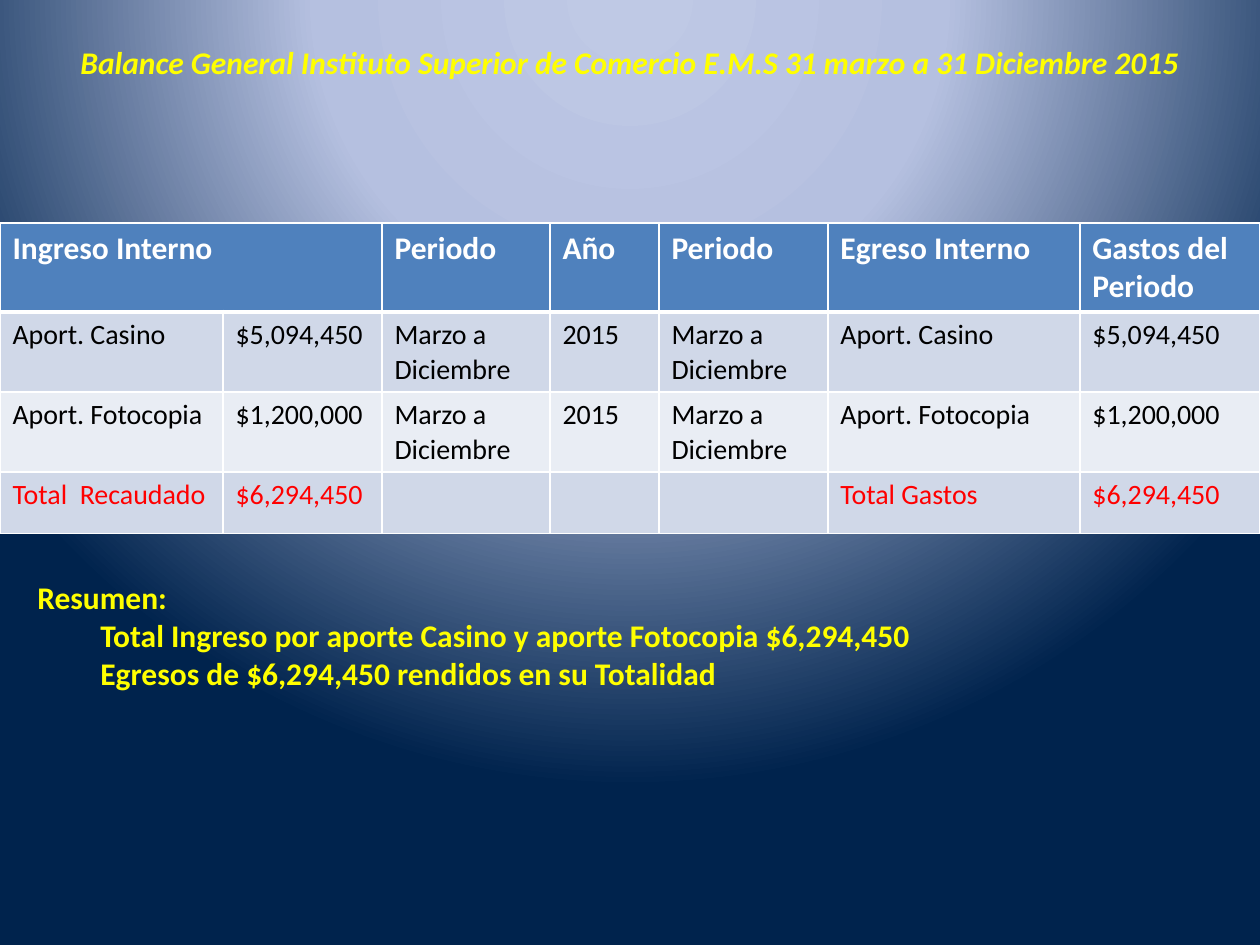
"""Build the 2015 balance slide: title, income and expense table, and summary."""
from lxml.etree import SubElement
from pptx import Presentation
from pptx.dml.color import RGBColor
from pptx.enum.text import MSO_AUTO_SIZE, PP_ALIGN
from pptx.oxml.ns import qn
from pptx.util import Pt

PX = 914400 // 126
COLORS = {
    "yellow": "FFFF00", "white": "FFFFFF", "black": "000000", "red": "FF0000",
    "header": "4F81BD", "band_dark": "D0D8E8", "band_light": "E9EDF4",
    "glow": "BFC9E5", "halo": "B5C0E0", "night": "00234D",
}


def add_run(paragraph, text, size, color, bold=False, italic=False):
    run = paragraph.add_run()
    run.text = text
    run.font.name = "Calibri"
    run.font.size = Pt(size)
    run.font.bold = bold
    run.font.italic = italic
    run.font.color.rgb = RGBColor.from_string(COLORS[color])


def add_text(slide, top, height, lines, align, italic=False):
    box = slide.shapes.add_textbox(25 * PX, top * PX, 1210 * PX, height * PX)
    frame = box.text_frame
    frame.word_wrap = True
    frame.auto_size = MSO_AUTO_SIZE.SHAPE_TO_FIT_TEXT
    for index, line in enumerate(lines):
        paragraph = frame.add_paragraph() if index else frame.paragraphs[0]
        paragraph.alignment = align
        add_run(paragraph, line, 18, "yellow", True, italic)


prs = Presentation()
prs.slide_width = 1260 * PX
prs.slide_height = 945 * PX
slide = prs.slides.add_slide(prs.slide_layouts[6])

slide.background.fill.gradient()
backdrop = slide.element.find(".//" + qn("a:gradFill"))
for child in list(backdrop):
    backdrop.remove(child)
stops = SubElement(backdrop, qn("a:gsLst"))
for percent, color in [(0, "glow"), (40, "halo"), (100, "night")]:
    stop = SubElement(stops, qn("a:gs"), pos=str(percent * 1000))
    SubElement(stop, qn("a:srgbClr"), val=COLORS[color])
circle = SubElement(backdrop, qn("a:path"), path="circle")
SubElement(circle, qn("a:fillToRect"), l="50000", t="-80000", r="50000", b="180000")

add_text(slide, 37, 50,
         ["Balance General Instituto Superior de Comercio E.M.S 31 marzo a 31 Diciembre 2015"],
         PP_ALIGN.CENTER, italic=True)

period = ["Marzo a Diciembre", "2015", "Marzo a Diciembre"]
casino = ["Aport. Casino", "$5,094,450"]
photocopy = ["Aport. Fotocopia", "$1,200,000"]
balance_rows = [
    ["Ingreso Interno", "", "Periodo", "Año", "Periodo", "Egreso Interno", "Gastos del Periodo"],
    casino + period + casino,
    photocopy + period + photocopy,
    ["Total  Recaudado", "$6,294,450", "", "", "", "Total Gastos", "$6,294,450"],
]
row_styles = [
    ("header", "white", 18, True),
    ("band_dark", "black", 16, False),
    ("band_light", "black", 16, False),
    ("band_dark", "red", 16, False),
]
column_widths = [223, 159, 168, 109, 169, 252, 180]
row_heights = [89, 79, 80, 62]

balance = slide.shapes.add_table(
    len(row_heights), len(column_widths), 0, 223 * PX,
    sum(column_widths) * PX, sum(row_heights) * PX).table
for column, width in zip(balance.columns, column_widths):
    column.width = width * PX
for row, height in zip(balance.rows, row_heights):
    row.height = height * PX
balance.cell(0, 0).merge(balance.cell(0, 1))

for r, (texts, (fill, color, size, bold)) in enumerate(zip(balance_rows, row_styles)):
    edge_points = {"L": 1, "R": 1, "T": 3 if r == 1 else 1, "B": 3 if r == 0 else 1}
    for c, text in enumerate(texts):
        cell = balance.cell(r, c)
        properties = cell._tc.get_or_add_tcPr()
        for side, points in edge_points.items():
            edge = SubElement(properties, qn("a:ln" + side), w=str(Pt(points)))
            edge_fill = SubElement(edge, qn("a:solidFill"))
            SubElement(edge_fill, qn("a:srgbClr"), val=COLORS["white"])
        cell.fill.solid()
        cell.fill.fore_color.rgb = RGBColor.from_string(COLORS[fill])
        if text:
            add_run(cell.text_frame.paragraphs[0], text, size, color, bold)

add_text(slide, 572, 127, [
    "Resumen:",
    "\tTotal Ingreso por aporte Casino y aporte Fotocopia $6,294,450",
    "\tEgresos de $6,294,450 rendidos en su Totalidad",
], PP_ALIGN.LEFT)

prs.save("out.pptx")
